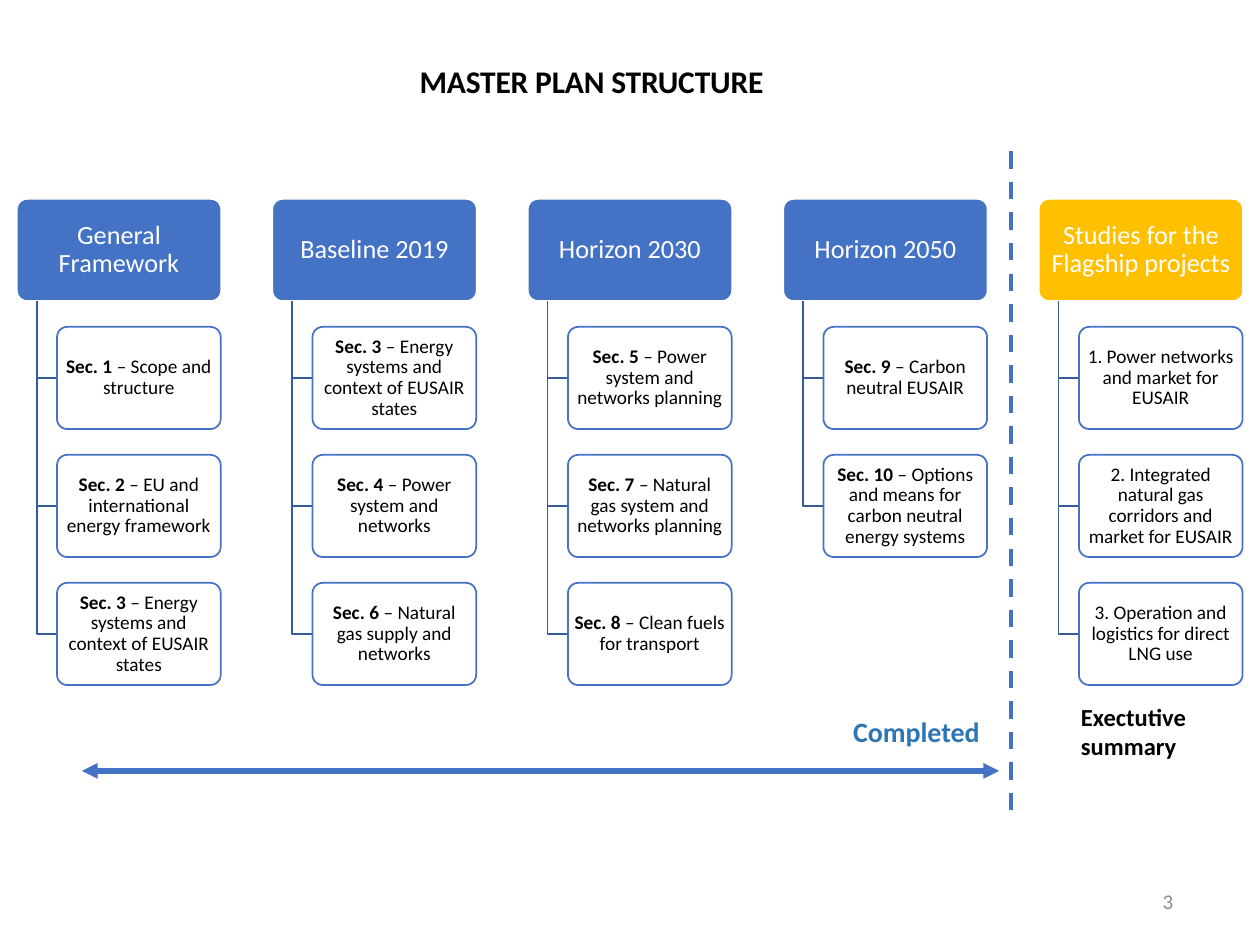
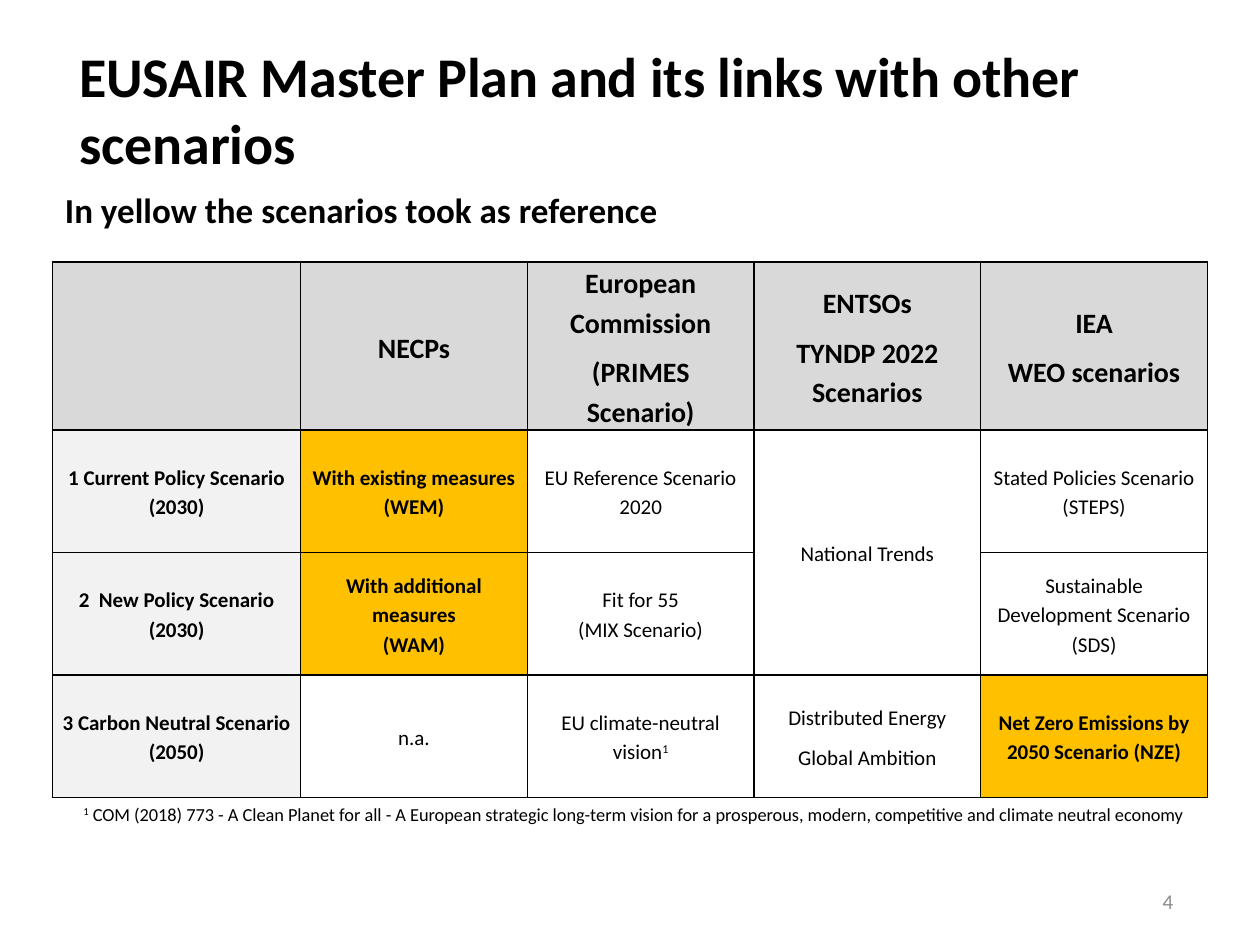
from dataclasses import dataclass

from lxml.etree import SubElement
from pptx import Presentation
from pptx.dml.color import RGBColor
from pptx.enum.dml import MSO_LINE
from pptx.enum.shapes import MSO_CONNECTOR, MSO_SHAPE
from pptx.enum.text import MSO_ANCHOR, PP_ALIGN
from pptx.oxml.ns import qn
from pptx.util import Cm, Pt

STRUCTURE_TITLE = "MASTER PLAN STRUCTURE"
BRANCHES = [
    ("General Framework", "blue", [
        ("Sec. 1 ", "– Scope and structure"),
        ("Sec. 2 ", "– EU and international energy framework"),
        ("Sec. 3 ", "– Energy systems and context of EUSAIR states"),
    ]),
    ("Baseline 2019", "blue", [
        ("Sec. 3 ", "– Energy systems and context of EUSAIR states"),
        ("Sec. 4 ", "– Power system and networks"),
        ("Sec. 6 ", "– Natural gas supply and networks"),
    ]),
    ("Horizon 2030", "blue", [
        ("Sec. 5 ", "– Power system and networks planning"),
        ("Sec. 7 ", "– Natural gas system and networks planning"),
        ("Sec. 8 ", "– Clean fuels for transport"),
    ]),
    ("Horizon 2050", "blue", [
        ("Sec. 9 ", "– Carbon neutral EUSAIR"),
        ("Sec. 10 ", "– Options and means for carbon neutral energy systems"),
    ]),
    ("Studies for the Flagship projects", "yellow", [
        ("", "1. Power networks and market for EUSAIR"),
        ("", "2. Integrated natural gas corridors and market for EUSAIR"),
        ("", "3. Operation and logistics for direct LNG use"),
    ]),
]
COMPLETED = "Completed"
SUMMARY = "Exectutive summary"

SCENARIO_TITLE = "EUSAIR Master Plan and its links with other scenarios"
SCENARIO_SUBTITLE = "In yellow the scenarios took as reference"
SCENARIOS = [
    [[], ["NECPs"], ["European Commission", "(PRIMES Scenario)"],
     ["ENTSOs", "TYNDP 2022 Scenarios"], ["IEA", "WEO scenarios"]],
    [["1 Current Policy Scenario (2030)"], ["With existing measures\n(WEM)"],
     ["EU Reference Scenario 2020"], ["National Trends"],
     ["Stated Policies Scenario (STEPS)"]],
    [["2  New Policy Scenario (2030)"], ["With additional measures\n(WAM)"],
     ["Fit for 55\n(MIX Scenario)"], [],
     ["Sustainable Development Scenario (SDS)"]],
    [["3 Carbon Neutral Scenario (2050)"], ["n.a."],
     ["EU climate-neutral vision^1"],
     ["Distributed Energy", "Global Ambition"],
     ["Net Zero Emissions by 2050 Scenario (NZE)"]],
]
REFERENCE_CELLS = {(1, 1), (2, 1), (3, 4)}
MERGED_CELLS = ((1, 3), (2, 3))
FOOTNOTE = ("COM (2018) 773 - A Clean Planet for all - A European strategic long-term "
            "vision for a prosperous, modern, competitive and climate neutral economy")


@dataclass(frozen=True)
class Theme:
    font: str = "Calibri"
    black: str = "000000"
    white: str = "FFFFFF"
    blue: str = "4472C4"
    branch_blue: str = "365B9D"
    label_blue: str = "2E75B6"
    yellow: str = "FFC000"
    header_gray: str = "D9D9D9"
    row_gray: str = "F2F2F2"
    number_gray: str = "8C8C8C"
    title_size: float = 32
    subtitle_size: float = 20
    structure_title_size: float = 18
    label_size: float = 16
    heading_size: float = 15
    summary_size: float = 14
    body_size: float = 12
    section_size: float = 11
    footnote_size: float = 10.5


THEME = Theme()
TIGHT = dict.fromkeys(("margin_left", "margin_top", "margin_right", "margin_bottom"), 0)
BOX_MARGINS = {
    "margin_left": Cm(0.06), "margin_right": Cm(0.06),
    "margin_top": Cm(0.05), "margin_bottom": Cm(0.05),
}
CELL_FORMAT = {
    "margin_left": Cm(0.18), "margin_right": Cm(0.18),
    "margin_top": 0, "margin_bottom": 0, "vertical_anchor": MSO_ANCHOR.MIDDLE,
}
CELL_PARAGRAPH = {"alignment": PP_ALIGN.CENTER, "line_spacing": 1.15, "space_after": Pt(6)}
BOX_PARAGRAPH = {"alignment": PP_ALIGN.CENTER, "line_spacing": 0.9}


def apply(target, values):
    for name, value in values.items():
        setattr(target, name, value)


def paint(fill, color):
    fill.solid()
    fill.fore_color.rgb = RGBColor.from_string(color)


def write(paragraph, text, size, color=THEME.black, bold=False, baseline=0, spacing=0):
    for index, line in enumerate(text.split("\n")):
        if index:
            paragraph.add_line_break()
        run = paragraph.add_run()
        run.text = line
        apply(run.font, {"name": THEME.font, "size": Pt(size), "bold": bold})
        run.font.color.rgb = RGBColor.from_string(color)
        properties = run.font._element
        if baseline:
            properties.set("baseline", str(baseline))
        if spacing:
            properties.set("spc", str(spacing))


def first_paragraph(shape, frame_format, alignment=PP_ALIGN.LEFT):
    apply(shape.text_frame, {"word_wrap": True, **frame_format})
    paragraph = shape.text_frame.paragraphs[0]
    paragraph.alignment = alignment
    return paragraph


def add_text(slide, place, frame_format=None, alignment=PP_ALIGN.LEFT):
    shape = slide.shapes.add_textbox(*map(Cm, place))
    return first_paragraph(shape, frame_format or {}, alignment)


def add_panel(slide, place, frame_format=None):
    shape = slide.shapes.add_shape(MSO_SHAPE.RECTANGLE, *map(Cm, place))
    shape.shadow.inherit = False
    paint(shape.fill, THEME.white)
    shape.line.fill.background()
    return first_paragraph(shape, {"vertical_anchor": MSO_ANCHOR.TOP, **(frame_format or {})})


def add_page_number(slide, number):
    frame_format = {**TIGHT, "vertical_anchor": MSO_ANCHOR.MIDDLE}
    paragraph = add_text(slide, (17.93, 17.65, 5.72, 1.02), frame_format, PP_ALIGN.RIGHT)
    write(paragraph, str(number), THEME.body_size, THEME.number_gray)


def add_box(slide, place, fill, outline, opacity=100):
    shape = slide.shapes.add_shape(MSO_SHAPE.ROUNDED_RECTANGLE, *map(Cm, place))
    shape.shadow.inherit = False
    shape.adjustments[0] = 0.1
    paint(shape.fill, fill)
    if opacity < 100:
        color = shape.element.spPr.find(qn("a:solidFill"))[0]
        SubElement(color, qn("a:alpha")).set("val", str(opacity * 1000))
    paint(shape.line.fill, outline)
    shape.line.width = Pt(1)
    paragraph = first_paragraph(shape, {"vertical_anchor": MSO_ANCHOR.MIDDLE, **BOX_MARGINS})
    apply(paragraph, BOX_PARAGRAPH)
    return paragraph


def add_branch(slide, x, top, bottom, end):
    builder = slide.shapes.build_freeform(Cm(x), Cm(top))
    builder.add_line_segments([(Cm(x), Cm(bottom)), (Cm(end), Cm(bottom))], close=False)
    shape = builder.convert_to_shape()
    shape.shadow.inherit = False
    shape.fill.background()
    paint(shape.line.fill, THEME.branch_blue)
    shape.line.width = Pt(1)


def add_line(slide, start, end, width):
    line = slide.shapes.add_connector(MSO_CONNECTOR.STRAIGHT, *map(Cm, start + end))
    paint(line.line.fill, THEME.blue)
    line.line.width = Pt(width)
    SubElement(line.element.spPr, qn("a:effectLst"))
    return line


def build_structure(slide):
    title = add_text(slide, (8.46, 1.25, 9.68, 0.77), TIGHT)
    write(title, STRUCTURE_TITLE, THEME.structure_title_size, bold=True, spacing=-10)

    left, top, pitch = 0.34, 4.01, 5.15
    heading_width, section_width, height = 4.12, 3.3, 2.06
    section_indent, branch_indent, section_pitch = 0.81, 0.4, 2.58
    for column, (heading, color, sections) in enumerate(BRANCHES):
        x = left + column * pitch
        place = (x, top, heading_width, height)
        paragraph = add_box(slide, place, getattr(THEME, color), THEME.white)
        write(paragraph, heading, THEME.heading_size, THEME.white)
        for row, (label, text) in enumerate(sections, start=1):
            y = top + row * section_pitch
            section_x = x + section_indent
            add_branch(slide, x + branch_indent, top + height, y + height / 2, section_x)
            place = (section_x, y, section_width, height)
            paragraph = add_box(slide, place, THEME.white, THEME.blue, opacity=90)
            if label:
                write(paragraph, label, THEME.section_size, bold=True)
            write(paragraph, text, THEME.section_size)

    divider = add_line(slide, (20.38, 3.05), (20.38, 16.41), 2.5)
    divider.line.dash_style = MSO_LINE.DASH
    completed = add_text(slide, (16.95, 14.27, 5.28, 0.94))
    write(completed, COMPLETED, THEME.label_size, THEME.label_blue, bold=True)
    arrow = add_line(slide, (20.14, 15.54), (1.65, 15.54), 3)
    outline = arrow.element.spPr.find(qn("a:ln"))
    for tag in ("a:headEnd", "a:tailEnd"):
        SubElement(outline, qn(tag)).set("type", "triangle")
    summary = add_text(slide, (21.54, 14.02, 4.11, 1.45))
    write(summary, SUMMARY, THEME.summary_size, bold=True)


def add_borders(cell):
    properties = cell._tc.get_or_add_tcPr()
    for side in ("a:lnL", "a:lnR", "a:lnT", "a:lnB"):
        border = SubElement(properties, qn(side), w=str(Pt(1)))
        fill = SubElement(border, qn("a:solidFill"))
        SubElement(fill, qn("a:srgbClr"), val=THEME.black)


def cell_fill(row, column):
    if row == 0:
        return THEME.header_gray
    if column == 0:
        return THEME.row_gray
    return THEME.yellow if (row, column) in REFERENCE_CELLS else None


def fill_cell(cell, row, column, texts):
    apply(cell, CELL_FORMAT)
    add_borders(cell)
    color = cell_fill(row, column)
    if color:
        paint(cell.fill, color)
    else:
        cell.fill.background()
    size = THEME.body_size if row else THEME.label_size
    for index, text in enumerate(texts):
        frame = cell.text_frame
        paragraph = frame.add_paragraph() if index else frame.paragraphs[0]
        apply(paragraph, CELL_PARAGRAPH)
        body, _, note = text.partition("^")
        write(paragraph, body, size, bold=bool(color))
        if note:
            write(paragraph, note, size, baseline=30000)


def build_scenarios(slide):
    widths = [5.0] + [4.57] * 4
    heights = [3.3] + [2.47] * 3
    place = (1.06, 5.28, sum(widths), sum(heights))
    table = slide.shapes.add_table(len(heights), len(widths), *map(Cm, place)).table
    apply(table, {"first_row": False, "horz_banding": False})
    for column, width in zip(table.columns, widths):
        column.width = Cm(width)
    for row, height in zip(table.rows, heights):
        row.height = Cm(height)
    for row, cells in enumerate(SCENARIOS):
        for column, texts in enumerate(cells):
            fill_cell(table.cell(row, column), row, column, texts)
    first, last = MERGED_CELLS
    table.cell(*first).merge(table.cell(*last))

    footnote = add_text(slide, (1.43, 16.06, 23.14, 0.71), {"word_wrap": False})
    write(footnote, "1", THEME.footnote_size, baseline=30000)
    write(footnote, " " + FOOTNOTE, THEME.footnote_size)
    title = add_panel(slide, (1.6, 0.84, 22.45, 2.74), TIGHT)
    write(title, SCENARIO_TITLE, THEME.title_size, bold=True, spacing=-10)
    subtitle = add_panel(slide, (1.06, 3.67, 15.9, 1.12))
    write(subtitle, SCENARIO_SUBTITLE, THEME.subtitle_size, bold=True)


def main():
    presentation = Presentation()
    apply(presentation, {"slide_width": Cm(25.4), "slide_height": Cm(19.05)})
    for number, build in enumerate((build_structure, build_scenarios), start=3):
        slide = presentation.slides.add_slide(presentation.slide_layouts[6])
        build(slide)
        add_page_number(slide, number)
    presentation.save("out.pptx")


if __name__ == "__main__":
    main()
